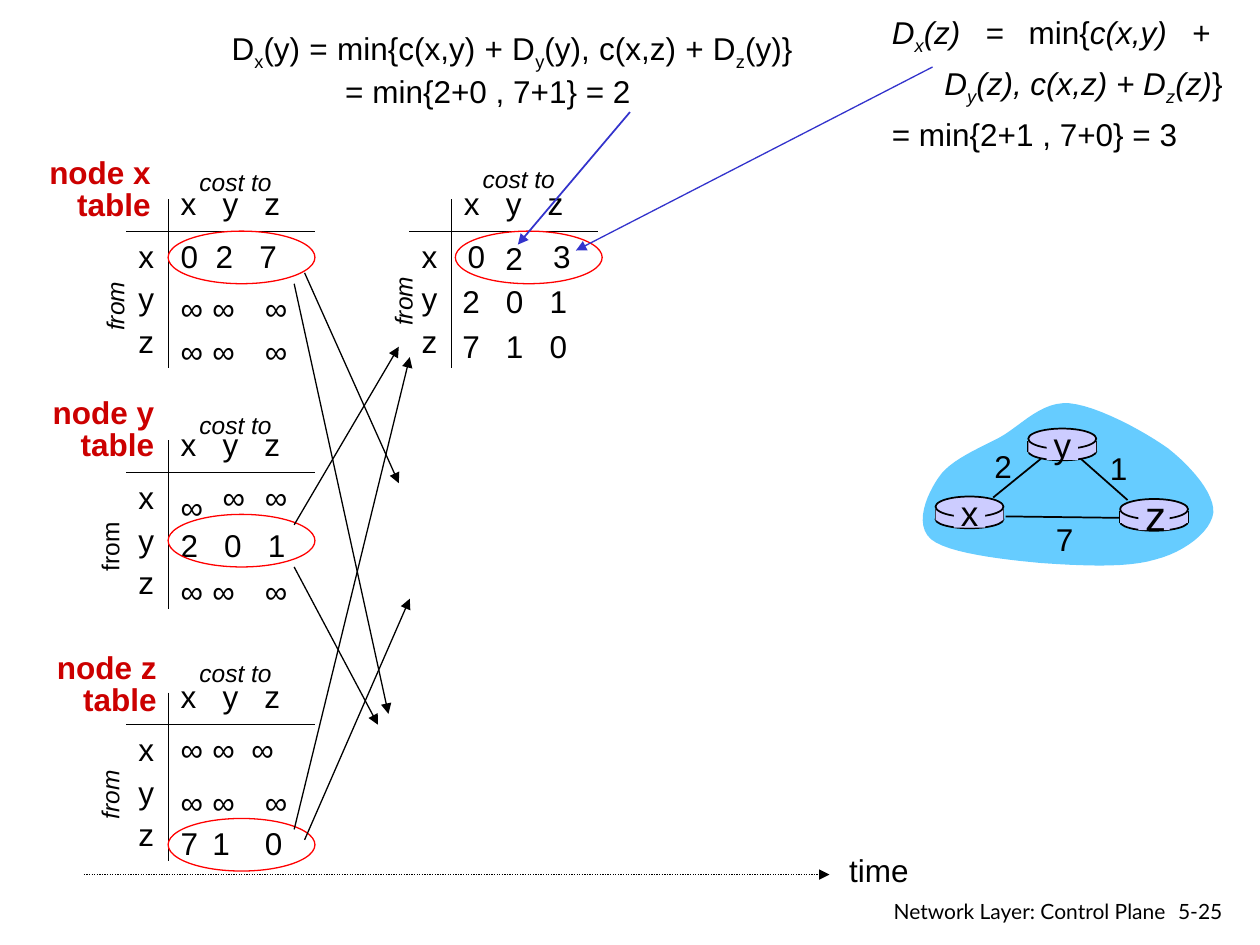
from lxml import etree
from pptx import Presentation
from pptx.dml.color import RGBColor
from pptx.enum.dml import MSO_LINE
from pptx.enum.shapes import MSO_CONNECTOR, MSO_SHAPE
from pptx.enum.text import MSO_ANCHOR, MSO_AUTO_SIZE, PP_ALIGN
from pptx.oxml.ns import qn
from pptx.util import Cm, Pt

STRAIGHT = MSO_CONNECTOR.STRAIGHT
OVAL, RECT = MSO_SHAPE.OVAL, MSO_SHAPE.RECTANGLE
LEFT, CENTER, RIGHT, JUSTIFY = PP_ALIGN.LEFT, PP_ALIGN.CENTER, PP_ALIGN.RIGHT, PP_ALIGN.JUSTIFY
TOP, MIDDLE = MSO_ANCHOR.TOP, MSO_ANCHOR.MIDDLE
GROW, FIXED = MSO_AUTO_SIZE.SHAPE_TO_FIT_TEXT, MSO_AUTO_SIZE.NONE
DOTTED = MSO_LINE.ROUND_DOT

COLORS = {"black": "000000", "title": "CC0000", "ring": "FF0000",
          "pointer": "3333CC", "cloud": "66CCFF", "router": "CCCCFF"}
BREAK = "\v"
ROW = 0.85
COLS = (0, 0.64, 1.7)
HEAD_TABS, DIGIT_TABS = (0.85, 1.69), (0.88, 1.76)


def rgb(name):
    return RGBColor.from_string(COLORS[name])


def inf_row(dy):
    return [(dx, dy, ["∞"], ()) for dx in COLS]


def bezier(p0, p1, p2, p3, steps=12):
    """Points along a cubic curve, without its start point."""
    for k in range(1, steps + 1):
        t = k / steps
        u = 1 - t
        yield tuple(u**3 * a + 3 * u * u * t * b + 3 * u * t * t * c + t**3 * d
                    for a, b, c, d in zip(p0, p1, p2, p3))


class Deck:
    def __init__(self, font="Arial"):
        self.prs = Presentation()
        self.prs.slide_width, self.prs.slide_height = Cm(25.4), Cm(19.05)
        self.s = self.prs.slides.add_slide(self.prs.slide_layouts[6])
        self.font = font

    def text(self, x, y, w, h, paras, size=18, color="black", align=LEFT, bold=False,
             italic=False, spacing=None, tabs=(), rot=0, anchor=TOP, font=None, grow=True):
        """A paragraph is a string or a list of (text, marks): i italic, _ subscript."""
        sp = self.s.shapes.add_textbox(Cm(x), Cm(y), Cm(w), Cm(h))
        sp.rotation = rot
        tf = sp.text_frame
        tf.word_wrap = not grow
        tf.auto_size = GROW if grow else FIXED
        tf.vertical_anchor = anchor
        for i, para in enumerate(paras):
            p = tf.paragraphs[0] if i == 0 else tf.add_paragraph()
            p.alignment = align
            if spacing:
                p.line_spacing = spacing
            if tabs:
                stops = etree.SubElement(p._p.get_or_add_pPr(), qn("a:tabLst"))
                for pos in tabs:
                    etree.SubElement(stops, qn("a:tab"), pos=str(int(Cm(pos))), algn="l")
            for words, marks in [(para, "")] if isinstance(para, str) else para:
                if words == BREAK:
                    p.add_line_break()
                    continue
                r = p.add_run()
                r.text = words
                r.font.name, r.font.size = font or self.font, Pt(size)
                r.font.bold, r.font.italic = bold, italic or "i" in marks
                r.font.color.rgb = rgb(color)
                if "_" in marks:
                    r.font._element.set("baseline", "-25000")

    def line(self, x1, y1, x2, y2, color="black", width=0.75, arrow=False, dash=None):
        c = self.s.shapes.add_connector(STRAIGHT, Cm(x1), Cm(y1), Cm(x2), Cm(y2))
        c.line.color.rgb, c.line.width = rgb(color), Pt(width)
        if dash:
            c.line.dash_style = dash
        if arrow:
            etree.SubElement(c.line._get_or_add_ln(), qn("a:tailEnd"), type="triangle")
        etree.SubElement(c._element.spPr, qn("a:effectLst"))

    def paint(self, sp, fill, line, width):
        sp.shadow.inherit = False
        if fill:
            sp.fill.solid()
            sp.fill.fore_color.rgb = rgb(fill)
        else:
            sp.fill.background()
        if line:
            sp.line.color.rgb, sp.line.width = rgb(line), Pt(width)
        else:
            sp.line.fill.background()

    def shape(self, kind, x, y, w, h, fill=None, line=None, width=1):
        sp = self.s.shapes.add_shape(kind, Cm(x), Cm(y), Cm(w), Cm(h))
        self.paint(sp, fill, line, width)

    def cloud(self, start, curves):
        points, here = [], start
        for curve in curves:
            points += bezier(here, *curve)
            here = curve[-1]
        fb = self.s.shapes.build_freeform(Cm(start[0]), Cm(start[1]))
        fb.add_line_segments([(Cm(x), Cm(y)) for x, y in points], close=True)
        self.paint(fb.convert_to_shape(), "cloud", None, 0)

    def table(self, x, y, cost_dy, side, ring, cells, side_italic=True):
        """Distance table whose ruled lines cross at x, y."""
        self.line(x, y - 0.64, x, y + 2.75)
        self.line(x - 0.85, y, x + 2.96, y)
        self.text(x, y - 1.07, 2.51, 1.02, ["x\ty\tz"], tabs=HEAD_TABS)
        for i, name in enumerate("xyz"):
            self.text(x - 0.85, y + i * ROW, 0.84, 1.02, [name])
        self.text(x + 0.38, y + cost_dy, 1.96, 0.84, ["cost to"], size=14, italic=True)
        self.text(x + side[0], y + side[1], 1.5, 0.84, ["from"], size=14,
                  italic=side_italic, rot=270)
        for dx, dy, paras, tabs in cells:
            w = 2.62 if tabs else 0.97 if paras == ["∞"] else 0.86
            self.text(x + dx, y + dy, w, 1.02 * len(paras), paras, tabs=tabs)
        self.shape(OVAL, x + ring[0], y + ring[1], 2.96, 1.06, line="ring", width=0.75)

    def router(self, x, y, name, size):
        w = 1.37
        self.shape(OVAL, x, y + 0.28, w, 0.36, "router", "black")
        for side in (x, x + w):
            self.line(side, y + 0.25, side, y + 0.48, width=1)
        self.shape(RECT, x, y + 0.25, w, 0.23, "router")
        self.shape(OVAL, x, y, w, 0.41, "router", "black")
        self.shape(RECT, x + 0.37, y + 0.05, 0.63, 0.58, "router")
        h = 1.27 if size > 20 else 1.09
        self.text(x + w / 2 - 0.43, y + 0.31 - h / 2, 0.86, h, [name], size=size, align=CENTER)


def main():
    d = Deck()
    tables = [
        (3.39, 4.66, -1.42, (-1.83, 1.09), (0, 0),
         [(0, 0, ["0\t2\t7"], (0.71, 1.59))] + inf_row(1.04) + inf_row(1.9)),
        (9.1, 4.66, -1.47, (-1.73, 0.99), (0.08, 0),
         [(0.08, 0, ["0"], ()), (0.84, 0.03, ["2"], ()), (1.8, 0, ["3"], ()),
          (-0.03, 0.91, ["2\t0\t1"], DIGIT_TABS), (-0.03, 1.8, ["7\t1\t0"], DIGIT_TABS)]),
        (3.39, 9.52, -1.37, (-1.93, 1.07), (0, 0.85),
         [(0.85, 0, ["∞"], ()), (1.7, 0, ["∞"], ()),
          (0, 0.2, ["∞", "2\t0\t1"], DIGIT_TABS)] + inf_row(1.88), False),
        (3.39, 14.6, -1.45, (-1.93, 0.99), (0, 1.9),
         [(0, 0, ["∞\t∞\t∞"], (0.64, 1.43))] + inf_row(1.06)
         + [(dx, 1.89, [n], ()) for dx, n in zip(COLS, "710")]),
    ]
    for table in tables:
        d.table(*table)
    for name, x, y in (("x", 0.74, 3.07), ("y", 0.81, 7.92), ("z", 0.86, 13.06)):
        d.text(x, y, 2.55, 1.55, [f"node {name}", "table"], color="title", bold=True,
               align=RIGHT, spacing=0.85)

    for ends in ((6.14, 5.5, 8.04, 9.74), (5.93, 5.72, 7.83, 14.39),
                 (5.93, 10.58, 8.04, 6.99), (5.93, 11.43, 7.62, 14.61),
                 (5.93, 16.72, 8.26, 7.2), (6.14, 16.93, 8.26, 12.07)):
        d.line(*ends, arrow=True)
    d.line(1.69, 17.63, 16.72, 17.63, arrow=True, dash=DOTTED)
    d.text(16.87, 17.04, 1.7, 1.02, ["time"])

    d.cloud((18.92, 9.63), [
        ((19.15, 9.27), (19.74, 9.04), (20.17, 8.81)),
        ((20.6, 8.56), (21.01, 8.08), (21.56, 8.13)),
        ((22.12, 8.18), (23.06, 8.69), (23.55, 9.04)),
        ((24.03, 9.42), (24.49, 9.96), (24.46, 10.34)),
        ((24.41, 10.72), (23.88, 11.13), (23.29, 11.28)),
        ((22.71, 11.46), (21.72, 11.4), (20.98, 11.35)),
        ((20.22, 11.28), (19.1, 11.15), (18.77, 10.87)),
        ((18.42, 10.57), (18.69, 9.96), (18.92, 9.63))])
    for link in ((20.02, 10.03, 20.98, 9.25), (21.79, 9.25, 22.73, 10.08),
                 (20.27, 10.41, 22.63, 10.44)):
        d.line(*link, width=1)
    for x, y, name, size in ((18.86, 10.01, "x", 20), (22.58, 10.06, "z", 24),
                             (20.73, 8.64, "y", 20)):
        d.router(x, y, name, size)
    for x, y, cost in ((22.12, 8.92, "1"), (19.79, 8.89, "2"), (21.03, 10.36, "7")):
        d.text(x, y, 0.86, 1.02, [cost], align=CENTER)

    d.text(4.42, 0.51, 11.99, 1.78, [[
        ("D", ""), ("x", "_"), ("(y) = min{c(x,y) + D", ""), ("y", "_"),
        ("(y), c(x,z) + D", ""), ("z", "_"), ("(y)} ", ""), (BREAK, ""),
        ("\t= min{2+0 , 7+1} = 2", "")]], align=JUSTIFY, anchor=MIDDLE, tabs=(2.29,))
    d.line(12.7, 2.26, 10.44, 4.93, "pointer", 1, arrow=True)
    d.text(17.73, 0.08, 7.42, 3, [
        [("D", "i"), ("x", "i_"), ("(z) = ", "i"), ("min{", ""), ("c(x,y) + ", "i"),
         (BREAK, ""), ("\tD", "i"), ("y", "i_"), ("(z), c(x,z) + D", "i"), ("z", "i_"),
         ("(z)", "i"), ("} ", "")],
        "= min{2+1 , 7+0} = 3"], align=JUSTIFY, anchor=MIDDLE, spacing=1.2, tabs=(1.06,))
    d.line(18.8, 1.35, 11.61, 5.05, "pointer", arrow=True)

    d.text(23.5, 17.98, 1.52, 0.76, ["5-25"], size=12, font="Lato", grow=False)
    d.text(17.7, 17.98, 6.05, 0.66, ["Network Layer: Control Plane"], size=12,
           font="Lato", align=RIGHT, grow=False)
    d.prs.save("out.pptx")


if __name__ == "__main__":
    main()
